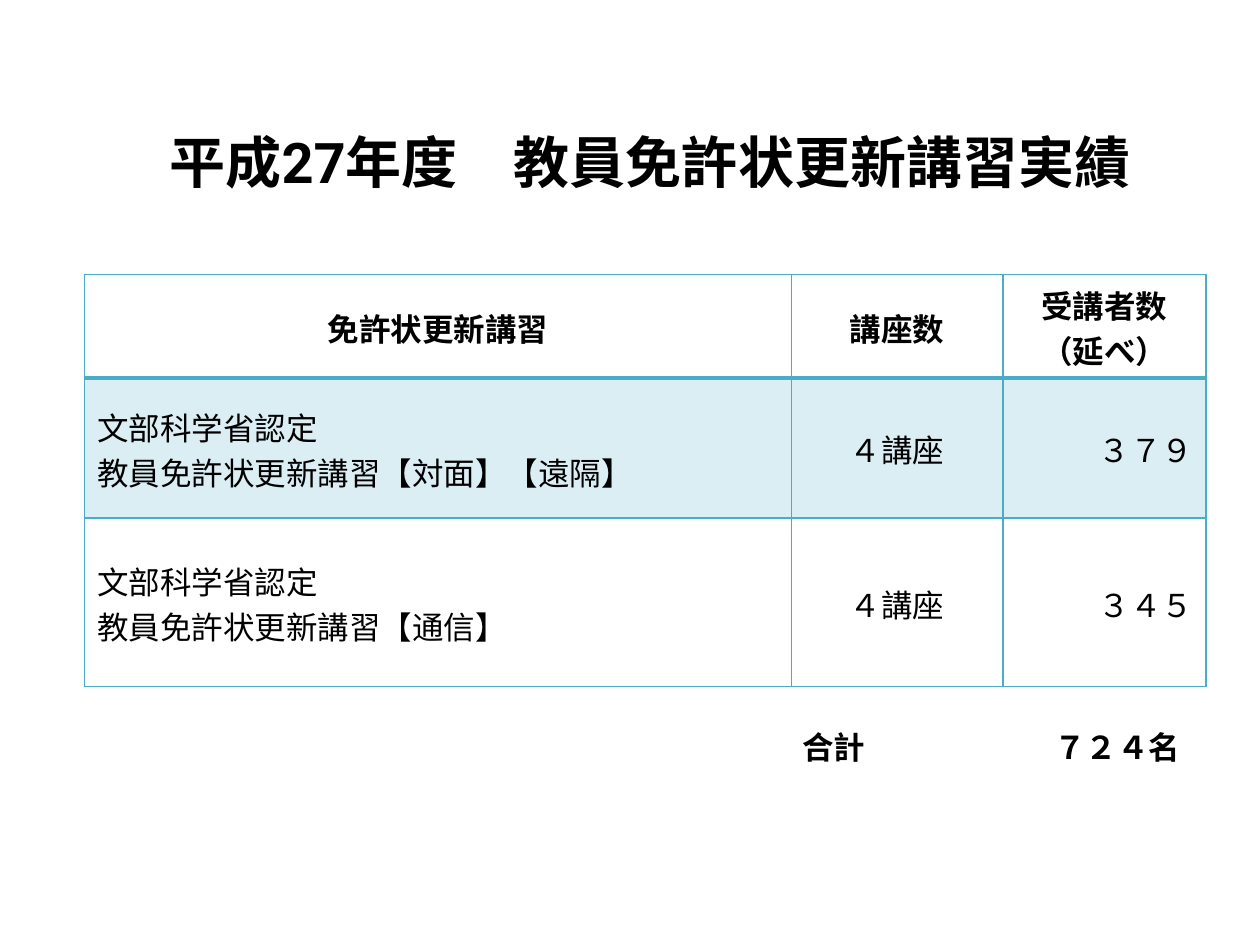
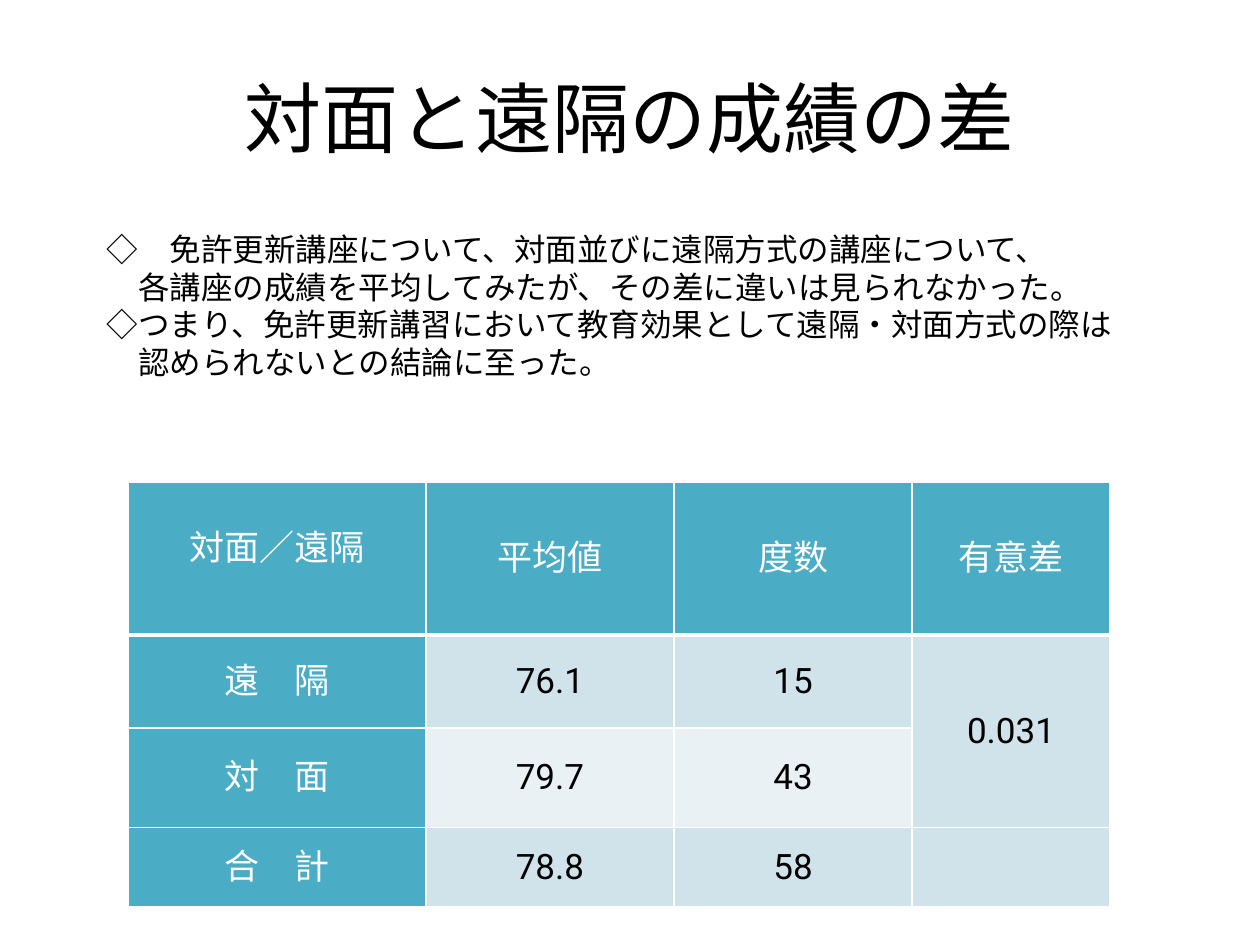
from collections import namedtuple
from dataclasses import dataclass

from lxml.etree import SubElement
from pptx import Presentation
from pptx.dml.color import RGBColor
from pptx.enum.text import MSO_ANCHOR as Anchor, PP_ALIGN as Align
from pptx.oxml.ns import qn
from pptx.util import Inches, Pt

Box = namedtuple("Box", "left top width height")
Border = namedtuple("Border", "color body_width header_width")


@dataclass(frozen=True)
class Theme:
    font: str = "Roboto"
    black: str = "000000"
    white: str = "FFFFFF"
    teal: str = "4BACC6"
    pale_teal: str = "DBEEF4"
    band_dark: str = "D0E3EA"
    band_light: str = "E9F1F5"
    title_size: int = 44
    heading_size: int = 32
    grid_size: int = 20
    body_size: int = 18
    tight_line: float = 21.5
    loose_line: float = 25.9


THEME = Theme()


def write_lines(frame, lines, size, color=THEME.black, bold=False,
                align=Align.LEFT, line_height=None):
    """Fill a text frame with one paragraph per line."""
    frame.word_wrap = True
    for index, line in enumerate(lines):
        paragraph = frame.paragraphs[0] if index == 0 else frame.add_paragraph()
        paragraph.alignment = align
        if line_height:
            paragraph.line_spacing = Pt(line_height)
        run = paragraph.add_run()
        run.text = line
        formats = {"name": THEME.font, "size": Pt(size), "bold": bold}
        for name, value in formats.items():
            setattr(run.font, name, value)
        run.font.color.rgb = RGBColor.from_string(color)
        SubElement(run.font._element, qn("a:ea"), typeface=THEME.font)


def add_text(slide, box, lines, size, anchor=Anchor.TOP, **formats):
    shape = slide.shapes.add_textbox(*map(Inches, box))
    shape.text_frame.vertical_anchor = anchor
    write_lines(shape.text_frame, lines, size, **formats)
    return shape.text_frame


def add_title(slide, box, text, size, bold=False):
    add_text(slide, box, [text], size, Anchor.MIDDLE, bold=bold, align=Align.CENTER)


def set_borders(cell, color, widths):
    """Draw the four cell edges; widths maps L, R, T and B to points."""
    properties = cell._tc.get_or_add_tcPr()
    for side, width in widths.items():
        line = SubElement(properties, qn(f"a:ln{side}"), w=str(Pt(width)))
        fill = SubElement(line, qn("a:solidFill"))
        SubElement(fill, qn("a:srgbClr"), val=color)


def add_grid(slide, box, column_shares, row_shares, border):
    """Add an unstyled table whose columns and rows share out the box."""
    shape = slide.shapes.add_table(len(row_shares), len(column_shares),
                                   *map(Inches, box))
    table = shape.table
    table.first_row = table.horz_banding = False
    for column, share in zip(table.columns, column_shares):
        column.width = Inches(box.width * share / sum(column_shares))
    for row, share in zip(table.rows, row_shares):
        row.height = Inches(box.height * share / sum(row_shares))
    for row_index, row in enumerate(table.rows):
        for cell in row.cells:
            widths = dict.fromkeys("LRTB", border.body_width)
            if row_index < 2:
                widths["B" if row_index == 0 else "T"] = border.header_width
            set_borders(cell, border.color, widths)
            cell.vertical_anchor = Anchor.MIDDLE
    return table


def paint(cell, color):
    cell.fill.solid()
    cell.fill.fore_color.rgb = RGBColor.from_string(color)


def add_course_table(slide, box):
    courses = [
        (["免許状更新講習"], "講座数", "受講者数（延べ）"),
        (["文部科学省認定", "教員免許状更新講習【対面】【遠隔】"], "４講座", "３７９"),
        (["文部科学省認定", "教員免許状更新講習【通信】"], "４講座", "３４５"),
    ]
    row_fills = [THEME.white, THEME.pale_teal, THEME.white]
    body_aligns = [Align.LEFT, Align.CENTER, Align.RIGHT]
    table = add_grid(slide, box, [5.61, 1.68, 1.61], [0.82, 1.11, 1.34],
                     Border(THEME.teal, 1, 2))
    for row_index, (name, count, attendees) in enumerate(courses):
        is_header = row_index == 0
        for column, lines in enumerate([name, [count], [attendees]]):
            cell = table.cell(row_index, column)
            paint(cell, row_fills[row_index])
            write_lines(cell.text_frame, lines, THEME.body_size, bold=is_header,
                        align=Align.CENTER if is_header else body_aligns[column],
                        line_height=THEME.loose_line)


def add_total(slide, box):
    frame = add_text(slide, box, ["\t合計\t７２４名"], THEME.body_size, bold=True)
    properties = frame.paragraphs[0]._p.get_or_add_pPr()
    tab_stops = SubElement(properties, qn("a:tabLst"))
    for position in (1.25, 3.25):
        SubElement(tab_stops, qn("a:tab"), pos=str(Inches(position)), algn="l")


def add_findings(slide, box):
    findings = [
        "◇　免許更新講座について、対面並びに遠隔方式の講座について、",
        "各講座の成績を平均してみたが、その差に違いは見られなかった。",
        "◇つまり、免許更新講習において教育効果として遠隔・対面方式の際は",
        "認められないとの結論に至った。",
    ]
    frame = add_text(slide, box, findings, THEME.body_size,
                     line_height=THEME.tight_line)
    for paragraph in frame.paragraphs[1::2]:
        paragraph._p.get_or_add_pPr().set("marL", str(Inches(0.25)))


def add_score_table(slide, box):
    scores = [
        ("対面／遠隔", "平均値", "度数", "有意差"),
        ("遠　隔", "76.1", "15", "0.031"),
        ("対　面", "79.7", "43", ""),
        ("合　計", "78.8", "58", ""),
    ]
    table = add_grid(slide, box, [2.36, 1.97, 1.89, 1.57],
                     [1.21, 0.74, 0.79, 0.63], Border(THEME.white, 1, 3))
    margins = {"margin_left": 0.07, "margin_right": 0.07,
               "margin_top": 0, "margin_bottom": 0}
    for row_index, row in enumerate(scores):
        band = THEME.band_dark if row_index % 2 else THEME.band_light
        for column, text in enumerate(row):
            cell = table.cell(row_index, column)
            is_label = row_index == 0 or column == 0
            for name, value in margins.items():
                setattr(cell, name, Inches(value))
            paint(cell, THEME.teal if is_label else band)
            if text:
                write_lines(cell.text_frame, [text], THEME.grid_size,
                            color=THEME.white if is_label else THEME.black,
                            align=Align.CENTER)
    table.cell(0, 0).margin_bottom = Inches(0.16)
    table.cell(1, 3).merge(table.cell(2, 3))


def build_results_slide(slide):
    add_title(slide, Box(0.63, 0.92, 9.06, 0.71),
              "平成27年度　教員免許状更新講習実績", THEME.heading_size, bold=True)
    add_course_table(slide, Box(0.67, 2.18, 8.9, 3.27))
    add_total(slide, Box(5.02, 5.73, 4.65, 0.4))


def build_comparison_slide(slide):
    add_title(slide, Box(0.5, 0.3, 9, 1.25), "対面と遠隔の成績の差", THEME.title_size)
    add_score_table(slide, Box(1.02, 3.83, 7.79, 3.37))
    add_findings(slide, Box(0.75, 1.78, 8.35, 1.31))


def main():
    presentation = Presentation()
    presentation.slide_width = Inches(10)
    presentation.slide_height = Inches(7.5)
    blank_layout = presentation.slide_layouts[6]
    for build in (build_results_slide, build_comparison_slide):
        build(presentation.slides.add_slide(blank_layout))
    presentation.save("out.pptx")


if __name__ == "__main__":
    main()
